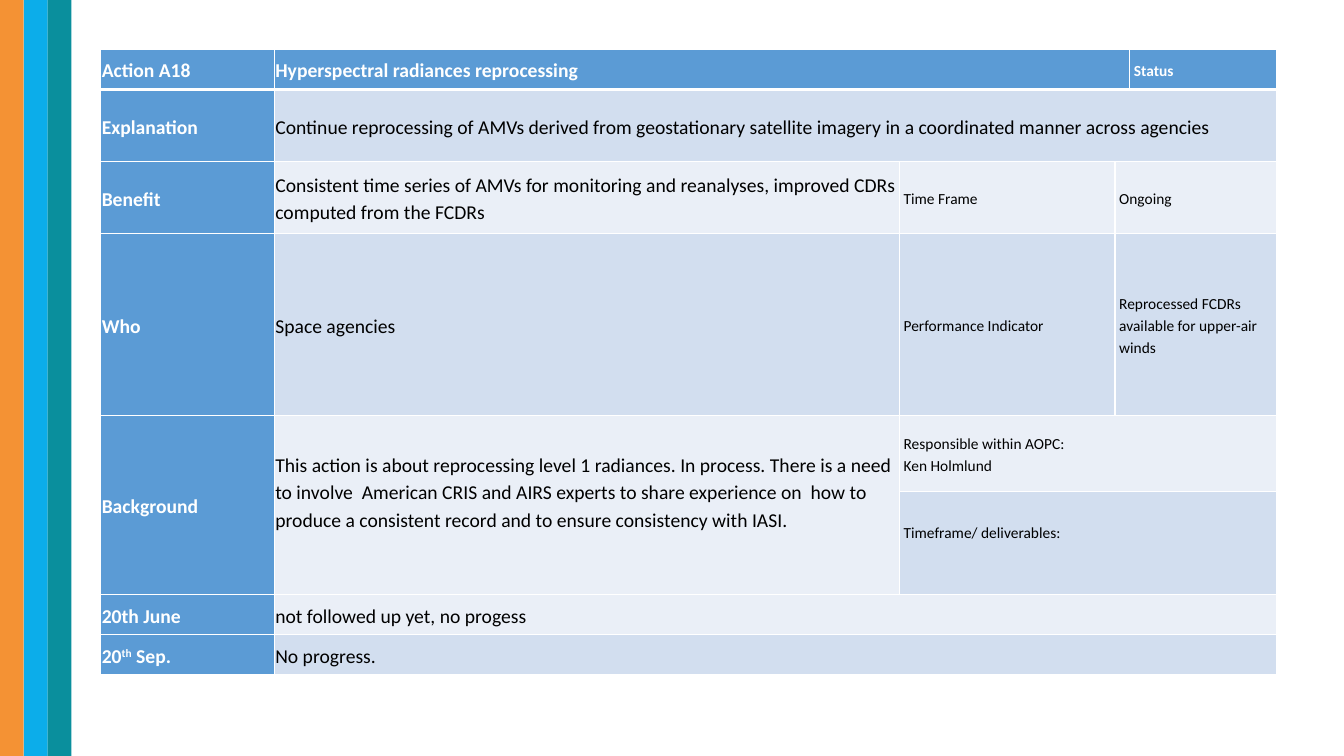
import pptx
import pptx.util
import pptx.dml.color
import pptx.enum.shapes
import pptx.enum.text
import pptx.oxml
import pptx.oxml.ns
from dataclasses import dataclass

Pt = pptx.util.Pt


@dataclass(frozen=True)
class Theme:
    font: str = "Calibri"
    stripes: tuple = ("F49234", "0CADEA", "0A8F9D")
    head: str = "5B9BD5"
    dark_band: str = "D2DEEF"
    light_band: str = "EAEFF7"
    white: str = "FFFFFF"
    black: str = "000000"
    body_size: float = 14
    small_size: float = 11
    line_spacing: float = 1.15


T = Theme()

SLIDE_W, SLIDE_H = 960, 540
STRIPE_W = 17
TABLE_LEFT, TABLE_TOP = 72, 35
COLS = (124, 446.5, 154, 10.5, 105)
ROWS = (29, 51.5, 51.5, 130, 54, 73.5, 29, 28.5)

# Row labels; "^" switches superscript on and off
LABELS = {
    0: "Action A18",
    1: "Explanation",
    2: "Benefit",
    3: "Who",
    4: "Background",
    6: "20th June",
    7: "20^th^ Sep.",
}
# (row, column): text in the wide column
BODY = {
    (0, 1): "Hyperspectral radiances reprocessing",
    (1, 1): "Continue reprocessing of AMVs derived from geostationary satellite "
            "imagery in a coordinated manner across agencies",
    (2, 1): "Consistent time series of AMVs for monitoring and reanalyses, "
            "improved CDRs computed from the FCDRs",
    (3, 1): "Space agencies",
    (4, 1): "This action is about reprocessing level 1 radiances. In process. "
            "There is a need to involve  American CRIS and AIRS experts to share "
            "experience on  how to produce a consistent record and to ensure "
            "consistency with IASI.",
    (6, 1): "not followed up yet, no progess",
    (7, 1): "No progress.",
}
# (row, column): small text at the right
DETAILS = {
    (0, 4): "Status",
    (2, 2): "Time Frame",
    (2, 3): "Ongoing",
    (3, 2): "Performance Indicator",
    (3, 3): "Reprocessed FCDRs available for upper-air winds",
    (4, 2): "Responsible within AOPC:\nKen Holmlund",
    (5, 2): "Timeframe/ deliverables:",
}
# (first row, first column, last row, last column)
MERGES = (
    (0, 1, 0, 3), (1, 1, 1, 4), (2, 3, 2, 4), (3, 3, 3, 4),
    (4, 0, 5, 0), (4, 1, 5, 1), (4, 2, 4, 4), (5, 2, 5, 4),
    (6, 1, 6, 4), (7, 1, 7, 4),
)
DARK_ROWS = (1, 3, 5, 7)
# Extra room under the text, which lifts it above the middle
LIFT = {(4, 1): 19.6, (5, 2): 15.4}


def rgb(value):
    return pptx.dml.color.RGBColor.from_string(value)


def write(tf, text, size=T.body_size, color=T.black, bold=False):
    """Fill a text frame: one paragraph a line, superscript between ^ marks."""
    for i, line in enumerate(text.split("\n")):
        p = tf.paragraphs[0] if i == 0 else tf.add_paragraph()
        p.line_spacing = T.line_spacing
        for j, part in enumerate(line.split("^")):
            r = p.add_run()
            r.text = part
            r.font.name = T.font
            r.font.size = Pt(size)
            r.font.bold = bold
            r.font.color.rgb = rgb(color)
            if j % 2:
                r._r.get_or_add_rPr().set("baseline", "30000")


def add_borders(cell, top, bottom):
    tc_pr = cell._tc.get_or_add_tcPr()
    for side, width in (("L", 1), ("R", 1), ("T", top), ("B", bottom)):
        tc_pr.append(pptx.oxml.parse_xml(
            f'<a:ln{side} {pptx.oxml.ns.nsdecls("a")} w="{Pt(width)}">'
            f'<a:solidFill><a:srgbClr val="{T.white}"/></a:solidFill></a:ln{side}>'))


def format_cell(cell, row, col):
    add_borders(cell, top=3 if row == 1 else 1, bottom=3 if row == 0 else 1)
    if row == 0 or col == 0:
        fill = T.head
    else:
        fill = T.dark_band if row in DARK_ROWS else T.light_band
    cell.fill.solid()
    cell.fill.fore_color.rgb = rgb(fill)
    small = (row, col) in DETAILS
    side, edge = (3, 1.5) if small else (0.7, 0.7)
    cell.margin_left = cell.margin_right = Pt(side)
    cell.margin_top = Pt(edge)
    cell.margin_bottom = Pt(edge + LIFT.get((row, col), 0))
    cell.vertical_anchor = pptx.enum.text.MSO_ANCHOR.MIDDLE


def add_stripes(slide):
    for i, color in enumerate(T.stripes):
        sp = slide.shapes.add_shape(
            pptx.enum.shapes.MSO_SHAPE.RECTANGLE,
            Pt(i * STRIPE_W), 0, Pt(STRIPE_W), Pt(SLIDE_H))
        sp.shadow.inherit = False
        sp.fill.solid()
        sp.fill.fore_color.rgb = rgb(color)
        sp.line.fill.background()


def add_action_table(slide):
    table = slide.shapes.add_table(
        len(ROWS), len(COLS), Pt(TABLE_LEFT), Pt(TABLE_TOP),
        Pt(sum(COLS)), Pt(sum(ROWS))).table
    for column, width in zip(table.columns, COLS):
        column.width = Pt(width)
    for row, height in zip(table.rows, ROWS):
        row.height = Pt(height)
    for row in range(len(ROWS)):
        for col in range(len(COLS)):
            format_cell(table.cell(row, col), row, col)
    for top, left, bottom, right in MERGES:
        table.cell(top, left).merge(table.cell(bottom, right))

    for row, text in LABELS.items():
        write(table.cell(row, 0).text_frame, text, color=T.white, bold=True)
    for texts, size in ((BODY, T.body_size), (DETAILS, T.small_size)):
        for (row, col), text in texts.items():
            header = row == 0
            write(table.cell(row, col).text_frame, text, size=size, bold=header,
                  color=T.white if header else T.black)


def main():
    prs = pptx.Presentation()
    prs.slide_width, prs.slide_height = Pt(SLIDE_W), Pt(SLIDE_H)
    slide = prs.slides.add_slide(prs.slide_layouts[6])
    add_stripes(slide)
    add_action_table(slide)
    prs.save("out.pptx")


if __name__ == "__main__":
    main()
